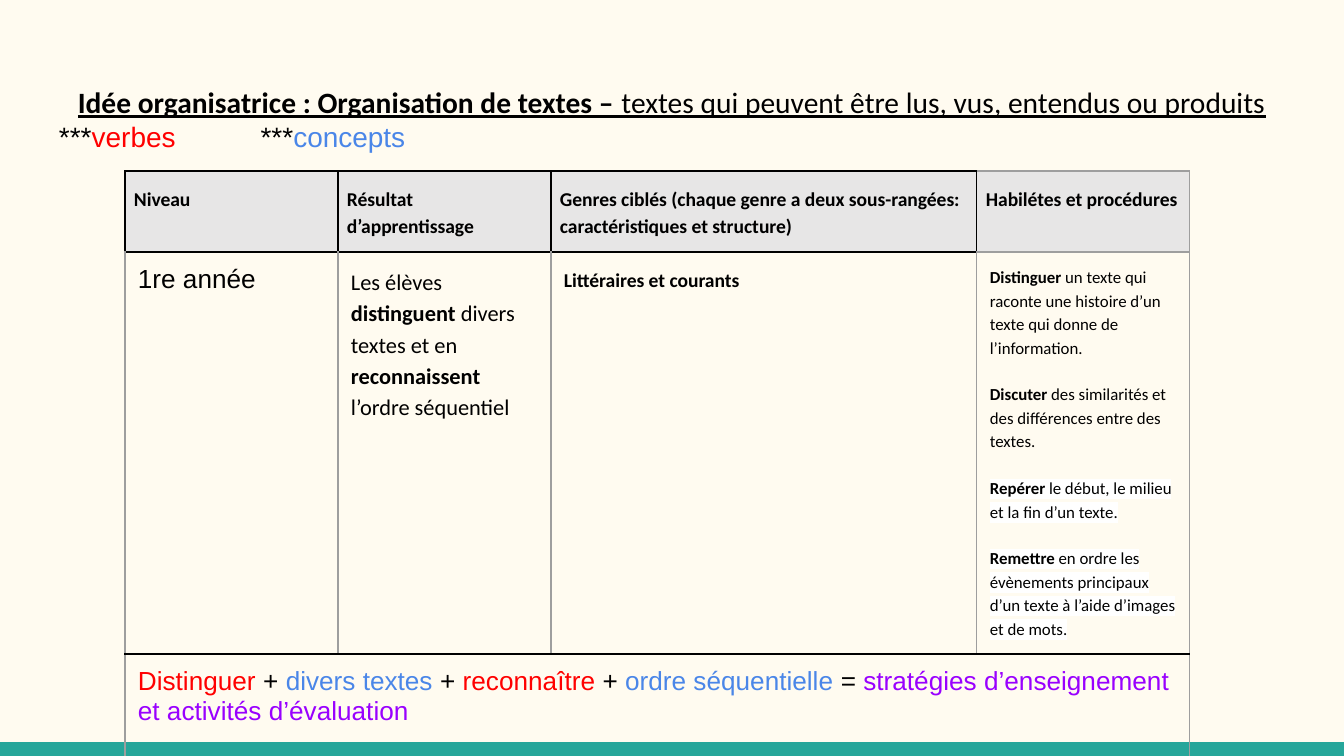
from dataclasses import dataclass
from lxml.etree import SubElement
from pptx import Presentation
from pptx.dml.color import RGBColor
from pptx.enum.shapes import MSO_SHAPE as Shape
from pptx.enum.text import MSO_ANCHOR as Anchor, MSO_AUTO_SIZE as AutoSize, PP_ALIGN as Align
from pptx.oxml.ns import qn
from pptx.util import Pt

PX = 6803.57


@dataclass(frozen=True)
class Theme:
    paper: str = "FFFBF0"
    teal: str = "26A69A"
    header: str = "E7E6E6"
    black: str = "000000"
    grey: str = "9E9E9E"
    white: str = "FFFFFF"
    verb: str = "FF0000"
    concept: str = "4A86E8"
    strategy: str = "9900FF"
    serif_free: str = "Calibri"
    plain: str = "Arial"
    title: float = 15.8
    legend: float = 15
    large: float = 14
    outcome: float = 12
    heading: float = 10.5
    skill: float = 9


theme = Theme()


def px(value):
    return round(value * PX)


def write(paragraph, pieces, size, font, spacing=1.0):
    paragraph.line_spacing = spacing
    for text, color, bold in pieces:
        run = paragraph.add_run()
        run.text = text
        run.font.size = Pt(size)
        run.font.name = font
        run.font.bold = bold
        run.font.color.rgb = RGBColor.from_string(color)


presentation = Presentation()
presentation.slide_width, presentation.slide_height = px(1344), px(756)
slide = presentation.slides.add_slide(presentation.slide_layouts[5])
slide.background.fill.solid()
slide.background.fill.fore_color.rgb = RGBColor.from_string(theme.paper)

band = slide.shapes.add_shape(Shape.RECTANGLE, 0, px(742), px(1344), px(14))
band.shadow.inherit = False
band.fill.solid()
band.fill.fore_color.rgb = RGBColor.from_string(theme.teal)
band.line.fill.background()

title = slide.shapes.title
title.left, title.top, title.width, title.height = px(46), px(66), px(1252), px(90)
frame = title.text_frame
frame.auto_size = AutoSize.NONE
frame.word_wrap = True
frame.vertical_anchor = Anchor.TOP
frame.margin_left = frame.margin_right = frame.margin_top = frame.margin_bottom = px(13)
heading = frame.paragraphs[0]
heading.alignment = Align.CENTER
write(heading, [
    ("Idée organisatrice : Organisation de textes – ", theme.black, True),
    ("textes qui peuvent être lus, vus, entendus ou produits", theme.black, False),
], theme.title, theme.serif_free, 1.15)
for run in heading.runs:
    run.font.underline = True
legend = frame.add_paragraph()
legend.alignment = Align.LEFT
write(legend, [
    ("***", theme.black, False),
    ("verbes", theme.verb, False),
    ("\t\t***", theme.black, False),
    ("concepts", theme.concept, False),
], theme.legend, theme.plain)

row_heights = [81, 402, 121]
column_width, column_count = 213, 5
table = slide.shapes.add_table(
    len(row_heights), column_count, px(125), px(171),
    px(column_width * column_count), px(sum(row_heights))).table
table.first_row = table.horz_banding = False
for row, height in zip(table.rows, row_heights):
    row.height = px(height)
for column in table.columns:
    column.width = px(column_width)

for row in range(len(row_heights)):
    for column in range(column_count):
        cell = table.cell(row, column)
        last = column == column_count - 1
        side = theme.black if row == 0 else theme.grey
        borders = {
            "a:lnL": side,
            "a:lnR": theme.grey if last else side,
            "a:lnT": theme.grey if last and row < 2 else theme.black,
            "a:lnB": theme.grey if row == 2 or (last and row == 0) else theme.black,
        }
        properties = cell._tc.get_or_add_tcPr()
        for tag, color in borders.items():
            line = SubElement(properties, qn(tag), w=str(Pt(0.75)))
            SubElement(SubElement(line, qn("a:solidFill")), qn("a:srgbClr"), val=color)
        if row == 0:
            cell.fill.solid()
            cell.fill.fore_color.rgb = RGBColor.from_string(theme.header)
        else:
            cell.fill.background()
        cell.margin_top = cell.margin_bottom = px(13)
        cell.margin_left = cell.margin_right = px(9 if row == 0 else 13)

for row in (0, 1):
    table.cell(row, 2).merge(table.cell(row, 3))
table.cell(2, 0).merge(table.cell(2, 4))

headings = {
    0: "Niveau",
    1: "Résultat d’apprentissage",
    2: "Genres ciblés (chaque genre a deux sous-rangées: caractéristiques et structure)",
    4: "Habilétes et procédures",
}
for column, text in headings.items():
    write(table.cell(0, column).text_frame.paragraphs[0], [(text, theme.black, True)],
          theme.heading, theme.serif_free, 1.15)

write(table.cell(1, 0).text_frame.paragraphs[0], [("1re année", theme.black, False)],
      theme.large, theme.plain)
write(table.cell(1, 1).text_frame.paragraphs[0], [
    ("Les élèves", theme.black, False),
    (" distinguent ", theme.black, True),
    ("divers textes et en ", theme.black, False),
    ("reconnaissent", theme.black, True),
    (" l’ordre séquentiel", theme.black, False),
], theme.outcome, theme.serif_free, 1.15)
write(table.cell(1, 2).text_frame.paragraphs[0],
      [("Littéraires et courants", theme.black, True)],
      theme.heading, theme.serif_free, 1.15)

skills = [
    ("Distinguer ", "un texte qui raconte une histoire d’un texte qui donne de l’information.", False),
    ("Discuter ", "des similarités et des différences entre des textes.", False),
    ("Repérer ", "le début, le milieu et la fin d’un texte.", True),
    ("Remettre ", "en ordre les évènements principaux d’un texte à l’aide d’images et de mots.", True),
]
skill_frame = table.cell(1, 4).text_frame
for index, (verb, detail, highlighted) in enumerate(skills):
    paragraph = skill_frame.add_paragraph() if index else skill_frame.paragraphs[0]
    paragraph.space_before = Pt(12.5 if index else 0)
    write(paragraph, [(verb, theme.black, True), (detail, theme.black, False)],
          theme.skill, theme.serif_free, 1.15)
    if highlighted:
        for run in paragraph.runs:
            run_properties = run._r.get_or_add_rPr()
            highlight = SubElement(run_properties, qn("a:highlight"))
            SubElement(highlight, qn("a:srgbClr"), val=theme.white)
            run_properties.find(qn("a:solidFill")).addnext(highlight)

write(table.cell(2, 0).text_frame.paragraphs[0], [
    ("Distinguer ", theme.verb, False),
    ("+ ", theme.black, False),
    ("divers textes", theme.concept, False),
    (" + ", theme.black, False),
    ("reconnaître ", theme.verb, False),
    ("+ ", theme.black, False),
    ("ordre séquentielle ", theme.concept, False),
    ("= ", theme.black, False),
    ("stratégies d’enseignement et activités d’évaluation", theme.strategy, False),
], theme.large, theme.plain)

presentation.save("out.pptx")
